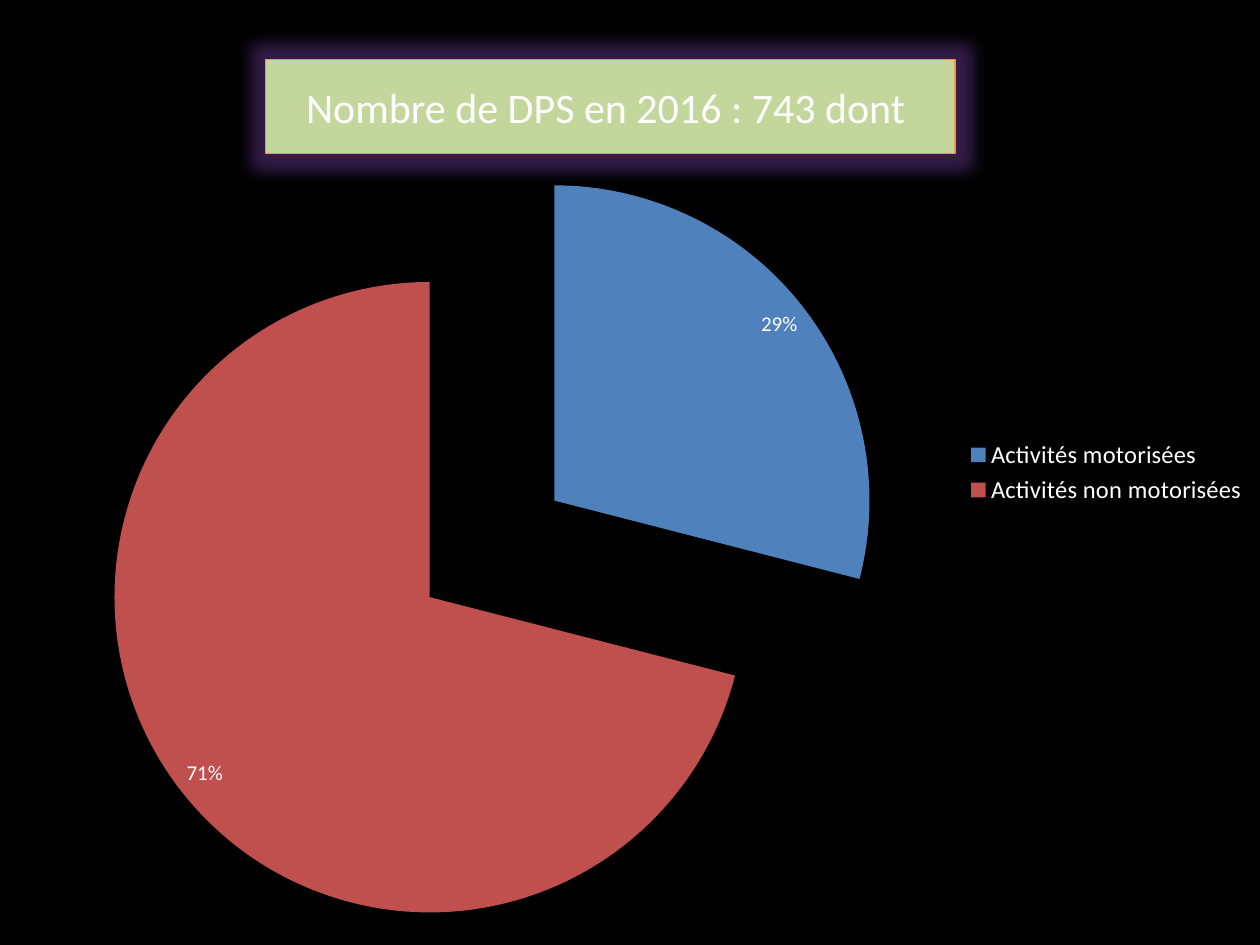
from lxml import etree
from pptx import Presentation
from pptx import util as u
from pptx.chart import data as chart_data
from pptx.dml.color import RGBColor
from pptx.enum import chart as charts, text
from pptx.oxml import parse_xml
from pptx.oxml.ns import nsdecls, qn

COLORS = {
    "background": "000000",
    "text": "FFFFFF",
    "motorised": "4F81BD",
    "other": "C0504D",
    "title_fill": "C3D69B",
    "title_line": "F69240",
    "glow": "7F46B8",
}
FONT = "Calibri"


def color(name):
    return RGBColor.from_string(COLORS[name])


def format_font(font, size, color_name="text"):
    font.name = FONT
    font.size = u.Pt(size)
    font.bold = False
    font.color.rgb = color(color_name)


def write_text(shape, content, size, align=text.PP_ALIGN.CENTER):
    frame = shape.text_frame
    frame.word_wrap = True
    frame.auto_size = text.MSO_AUTO_SIZE.NONE
    frame.vertical_anchor = text.MSO_ANCHOR.MIDDLE
    paragraph = frame.paragraphs[0]
    paragraph.alignment = align
    run = paragraph.add_run()
    run.text = content
    format_font(run.font, size)


def set_plot_box(chart, left, top, width, height):
    plot_area = chart._chartSpace.chart.plotArea
    for layout in plot_area.findall(qn("c:layout")):
        plot_area.remove(layout)
    layout = etree.Element(qn("c:layout"))
    manual = etree.SubElement(layout, qn("c:manualLayout"))
    values = {"layoutTarget": "inner", "xMode": "edge", "yMode": "edge",
              "x": left, "y": top, "w": width, "h": height}
    for tag, value in values.items():
        etree.SubElement(manual, qn(f"c:{tag}")).set("val", str(value))
    plot_area.insert(0, layout)


def add_activity_pie(slide, left, top, width, height):
    activities = chart_data.CategoryChartData()
    activities.categories = ["Activités motorisées", "Activités non motorisées"]
    activities.add_series("Series 1", (29, 71))
    chart = slide.shapes.add_chart(
        charts.XL_CHART_TYPE.PIE, left, top, width, height, activities).chart
    chart.has_title = False
    format_font(chart.font, 10, "background")
    chart._chartSpace.chart.addnext(parse_xml(
        f'<c:spPr {nsdecls("c", "a")}><a:solidFill>'
        f'<a:srgbClr val="{COLORS["background"]}"/></a:solidFill>'
        '<a:ln><a:noFill/></a:ln></c:spPr>'))
    set_plot_box(chart, 0.07, 0.164, 0.641, 0.834)

    chart.has_legend = True
    chart.legend.position = charts.XL_LEGEND_POSITION.RIGHT
    chart.legend.include_in_layout = False
    format_font(chart.legend.font, 14)

    plot = chart.plots[0]
    plot.vary_by_categories = True
    series = plot.series[0]
    for index, name in enumerate(("motorised", "other")):
        fill = series.points[index].format.fill
        fill.solid()
        fill.fore_color.rgb = color(name)
    series._element.find(qn("c:dPt")).addprevious(
        parse_xml(f'<c:explosion {nsdecls("c")} val="25"/>'))

    labels = series.data_labels
    labels.show_percentage = True
    labels.show_value = False
    labels.number_format = "0%"
    labels.number_format_is_linked = False
    labels.position = charts.XL_LABEL_POSITION.INSIDE_END
    format_font(labels.font, 12)


def add_title_banner(slide, left, top, width, height):
    title = slide.shapes.title
    title.left, title.top, title.width, title.height = left, top, width, height
    title.fill.solid()
    title.fill.fore_color.rgb = color("title_fill")
    title.line.color.rgb = color("title_line")
    title.line.width = u.Pt(0.75)
    title._element.spPr.append(parse_xml(
        f'<a:effectLst {nsdecls("a")}><a:glow rad="{u.Inches(0.25)}">'
        f'<a:srgbClr val="{COLORS["glow"]}"><a:alpha val="40000"/></a:srgbClr>'
        '</a:glow></a:effectLst>'))
    write_text(title, "Nombre de DPS en 2016 : 743 dont ", 24)
    slide.shapes._spTree.append(title._element)


def main():
    presentation = Presentation()
    presentation.slide_width = u.Inches(10)
    presentation.slide_height = u.Inches(7.5)
    slide = presentation.slides.add_slide(presentation.slide_layouts[5])
    add_activity_pie(slide, 0, 0, presentation.slide_width, presentation.slide_height)
    add_title_banner(slide, u.Inches(2.11), u.Inches(0.47), u.Inches(5.47), u.Inches(0.75))
    presentation.save("out.pptx")


if __name__ == "__main__":
    main()
